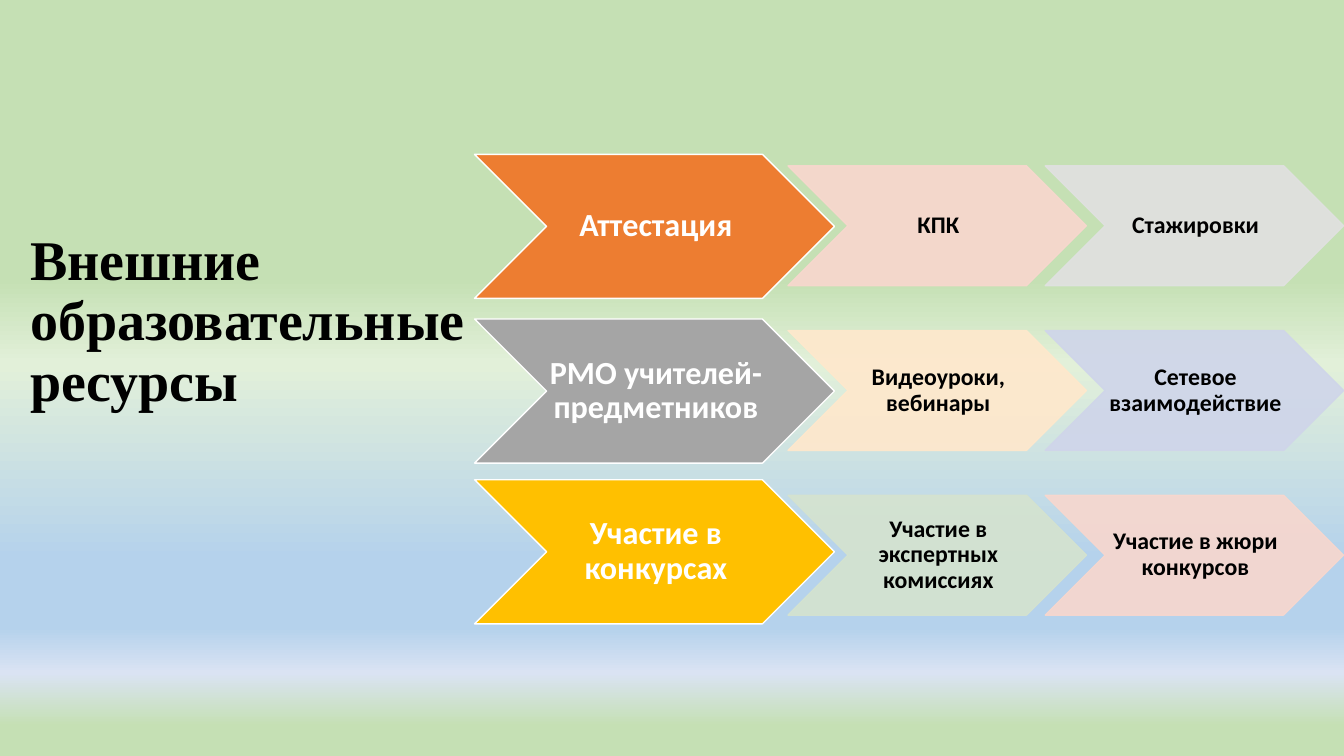
from lxml.etree import SubElement
from pptx import Presentation
from pptx.dml.color import RGBColor
from pptx.enum.shapes import MSO_SHAPE
from pptx.enum.text import MSO_ANCHOR, PP_ALIGN
from pptx.oxml.ns import qn
from pptx.util import Cm, Pt

COLORS = {
    "black": "000000", "white": "FFFFFF", "orange": "ED7D31", "gray": "A5A5A5",
    "gold": "FFC000", "pink": "F8D7CE", "silver": "E1E1E1", "cream": "FFE8CC",
    "lavender": "CFD5EA", "sage": "D5E3CF", "green": "C5E0B4",
    "pale_green": "E2F0D9", "blue": "B5D2EC", "pale_blue": "DAE3F3",
}
GRADIENT = [(37, "green", 77), (48, "pale_green", 100), (74, "blue", 100),
            (83, "blue", 100), (89, "pale_blue", 100), (96, "green", 100)]
ROWS = [
    (3.89, "Аттестация", "orange",
     [("КПК", "pink"), ("Стажировки", "silver")]),
    (8.04, "РМО учителей-предметников", "gray",
     [("Видеоуроки, вебинары", "cream"), ("Сетевое взаимодействие", "lavender")]),
    (12.09, "Участие в конкурсах", "gold",
     [("Участие в экспертных комиссиях", "sage"), ("Участие в жюри конкурсов", "pink")]),
]
DETAIL_LEFT, DETAIL_TOP = 19.86, 4.18
DETAIL_STEP, ROW_STEP = 6.48, 4.15


class SlideBuilder:
    """Draws styled elements on the current slide."""

    def __init__(self, slide):
        self.s = slide

    def set_alpha(self, parent, percent):
        for clr in parent.iter(qn("a:srgbClr")):
            SubElement(clr, qn("a:alpha"), val=str(percent * 1000))

    def background(self, stops):
        fill = self.s.background.fill
        fill.gradient()
        fill.gradient_angle = 270
        gs_list = next(self.s.element.iter(qn("a:gsLst")))
        for gs in list(gs_list):
            gs_list.remove(gs)
        for pos, color, alpha in stops:
            gs = SubElement(gs_list, qn("a:gs"), pos=str(pos * 1000))
            SubElement(gs, qn("a:srgbClr"), val=COLORS[color])
            if alpha < 100:
                self.set_alpha(gs, alpha)

    def set_text(self, sp, text, size, color, font):
        tf = sp.text_frame
        tf.word_wrap = True
        tf.text = text
        p = tf.paragraphs[0]
        p.line_spacing = 0.9
        r = p.runs[0]
        r.font.name, r.font.size, r.font.bold = font, Pt(size), True
        r.font.color.rgb = RGBColor.from_string(COLORS[color])
        return tf, p

    def title(self, text, left, top, width, height):
        sp = self.s.shapes.add_textbox(Cm(left), Cm(top), Cm(width), Cm(height))
        p = self.set_text(sp, text, 40, "black", "Times New Roman")[1]
        p.space_before = Pt(10)

    def chevron(self, text, box, fill, line, size, color, alpha=100):
        sp = self.s.shapes.add_shape(MSO_SHAPE.CHEVRON, *map(Cm, box))
        sp.shadow.inherit = False
        sp.fill.solid()
        sp.fill.fore_color.rgb = RGBColor.from_string(COLORS[fill])
        sp.line.color.rgb = RGBColor.from_string(COLORS[line])
        sp.line.width = Pt(1)
        if alpha < 100:
            self.set_alpha(sp.element.spPr, alpha)
        tf, p = self.set_text(sp, text, size, color, "Calibri")
        tf.vertical_anchor = MSO_ANCHOR.MIDDLE
        tf.margin_left, tf.margin_right = Cm(size / 300), 0
        tf.margin_top = tf.margin_bottom = Cm(size / 600)
        p.alignment = PP_ALIGN.CENTER


def main():
    prs = Presentation()
    prs.slide_width, prs.slide_height = Cm(33.87), Cm(19.05)
    builder = SlideBuilder(prs.slides.add_slide(prs.slide_layouts[6]))
    builder.background(GRADIENT)
    for row, (top, topic, fill, details) in enumerate(ROWS):
        builder.chevron(topic, (11.96, top, 9.07, 3.63), fill, "white", 23, "white")
        for col, (detail, tint) in enumerate(details):
            box = (DETAIL_LEFT + col * DETAIL_STEP, DETAIL_TOP + row * ROW_STEP, 7.52, 3.02)
            builder.chevron(detail, box, tint, tint, 17, "black", 90)
    builder.title("Внешние образовательные ресурсы", 0.51, 5.72, 13.54, 10.59)
    prs.save("out.pptx")


if __name__ == "__main__":
    main()
